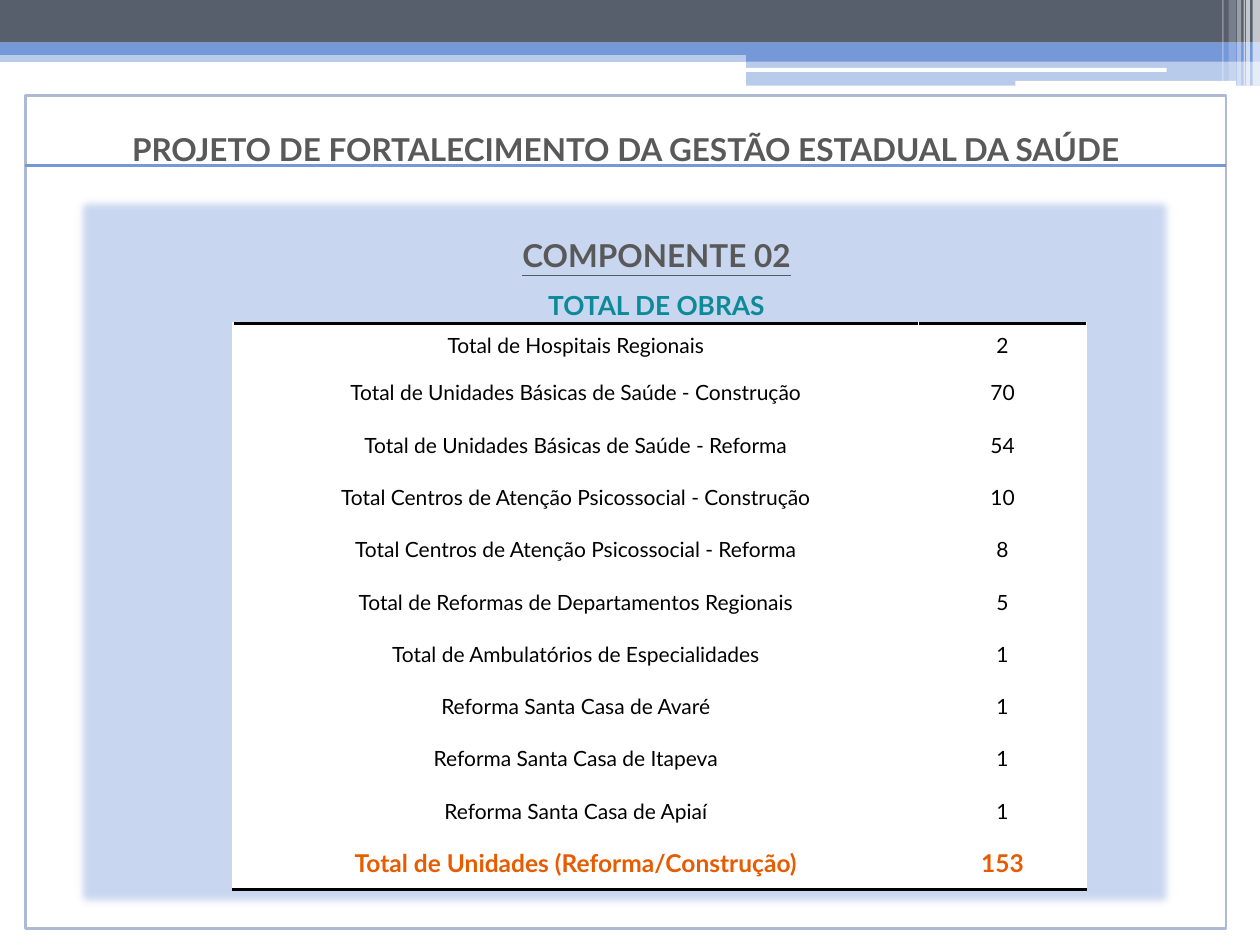
from lxml import etree
from pptx import Presentation
from pptx.dml.color import RGBColor
from pptx.enum.shapes import MSO_CONNECTOR, MSO_SHAPE
from pptx.enum.text import MSO_ANCHOR, PP_ALIGN
from pptx.oxml.ns import qn
from pptx.util import Cm, Pt

RECTANGLE, ROUNDED = MSO_SHAPE.RECTANGLE, MSO_SHAPE.ROUNDED_RECTANGLE
STRAIGHT = MSO_CONNECTOR.STRAIGHT
TOP, MIDDLE = MSO_ANCHOR.TOP, MSO_ANCHOR.MIDDLE
CENTER = PP_ALIGN.CENTER
FONT = "Lato"

COLORS = {
    "white": "FFFFFF", "black": "000000", "slate": "575F6D", "blue": "7598D9",
    "pale": "C8D6F0", "outline": "AEBAD5", "gray": "595959", "teal": "0D8A97",
    "orange": "E75C01",
}

TITLE = "PROJETO DE FORTALECIMENTO DA GESTÃO ESTADUAL DA SAÚDE"
COMPONENT = "COMPONENTE 02"
SUBTITLE = "TOTAL DE OBRAS"
WORKS = [
    ("Total de Hospitais Regionais", "2"),
    ("Total de Unidades Básicas de Saúde - Construção", "70"),
    ("Total de Unidades Básicas de Saúde - Reforma", "54"),
    ("Total Centros de Atenção Psicossocial - Construção", "10"),
    ("Total Centros de Atenção Psicossocial - Reforma", "8"),
    ("Total de Reformas de Departamentos Regionais", "5"),
    ("Total de Ambulatórios de Especialidades", "1"),
    ("Reforma Santa Casa de Avaré", "1"),
    ("Reforma Santa Casa de Itapeva", "1"),
    ("Reforma Santa Casa de Apiaí", "1"),
    ("Total de Unidades (Reforma/Construção)", "153"),
]

# Lengths in centimetres
WIDTH, HEIGHT = 25.4, 19.05
RIGHT_BAND = 15.04
# left, top, width, height, colour, opacity in percent
BANDS = [
    (0, 1.02, WIDTH, 0.23, "blue", 50),
    (0, 0, WIDTH, 0.86, "slate", 100),
    (0, 0.86, WIDTH, 0.25, "blue", 100),
    (RIGHT_BAND, 0.99, WIDTH - RIGHT_BAND, 0.25, "blue", 100),
    (RIGHT_BAND, 1.22, WIDTH - RIGHT_BAND, 0.51, "blue", 50),
]
SLITS = [(15.01, 1.37, 8.51, 0.08), (20.47, 1.63, 4.45, 0.1)]
# left, width, height, opacity in percent
STRIPES = [
    (25.25, 0.15, 1.73, 65), (25.12, 0.08, 1.73, 65), (25.07, 0.03, 1.73, 60),
    (24.94, 0.08, 1.73, 40), (24.77, 0.15, 1.63, 20), (24.64, 0.03, 1.63, 30),
]
FRAME = (0.51, 1.93, 24.21, 16.79)
PANEL = (1.5, 3.94, 22.2, 14.4)
TABLE_LEFT, TABLE_TOP, TABLE_HEIGHT = 4.7, 6.53, 11.4
COLUMN_WIDTHS = (13.82, 3.38)
FIRST_ROW = 0.86
RULE_TOP = 3.33


def color(name):
    return RGBColor.from_string(COLORS[name])


def add_box(slide, box, fill, opacity=100, line=None, kind=RECTANGLE):
    shape = slide.shapes.add_shape(kind, *map(Cm, box))
    shape.shadow.inherit = False
    shape.fill.solid()
    shape.fill.fore_color.rgb = color(fill)
    if opacity < 100:
        fill_color = shape.fill._xPr.find(".//" + qn("a:srgbClr"))
        etree.SubElement(fill_color, qn("a:alpha"), val=str(opacity * 1000))
    if line:
        shape.line.color.rgb = color(line)
        shape.line.width = Pt(1.5)
    else:
        shape.line.fill.background()
    return shape


def set_margins(target, left=0, top=0, right=0, bottom=0):
    target.margin_left, target.margin_top = Cm(left), Cm(top)
    target.margin_right, target.margin_bottom = Cm(right), Cm(bottom)


def write(paragraph, text, size, ink, bold=False, underline=False, before=0):
    paragraph.alignment = CENTER
    paragraph.space_before = Pt(before)
    run = paragraph.add_run()
    run.text = text
    font = run.font
    font.name, font.size = FONT, Pt(size)
    font.bold, font.underline = bold, underline
    font.color.rgb = color(ink)


def add_cell_border(cell, side):
    """Draw a 2 pt black border; it must precede the cell fill in the XML."""
    border = etree.Element(qn("a:" + side), w=str(Pt(2)))
    fill = etree.SubElement(border, qn("a:solidFill"))
    etree.SubElement(fill, qn("a:srgbClr"), val=COLORS["black"])
    cell._tc.get_or_add_tcPr().insert(0, border)


def add_header_bands(slide):
    for *box, fill, opacity in BANDS:
        add_box(slide, box, fill, opacity)
    for box in SLITS:
        add_box(slide, box, "white", kind=ROUNDED)
    for left, width, height, opacity in STRIPES:
        add_box(slide, (left, 0, width, height), "white", opacity)


def add_frame(slide):
    frame = add_box(slide, FRAME, "white", line="outline").text_frame
    frame.vertical_anchor = TOP
    set_margins(frame, top=0.69)
    write(frame.paragraphs[0], TITLE, 18, "gray", bold=True)


def add_panel(slide):
    panel = add_box(slide, PANEL, "pale", line="outline")
    effects = panel._element.spPr.find(qn("a:effectLst"))
    etree.SubElement(effects, qn("a:softEdge"), rad=str(Pt(5)))
    frame = panel.text_frame
    frame.vertical_anchor = TOP
    set_margins(frame, left=1.52, top=0.82, right=0.25)
    write(frame.paragraphs[0], COMPONENT, 18, "gray", bold=True, underline=True)
    write(frame.add_paragraph(), SUBTITLE, 15, "teal", bold=True, before=9)


def add_works_table(slide):
    last = len(WORKS) - 1
    table = slide.shapes.add_table(
        len(WORKS), len(COLUMN_WIDTHS), Cm(TABLE_LEFT), Cm(TABLE_TOP),
        Cm(sum(COLUMN_WIDTHS)), Cm(TABLE_HEIGHT)).table
    table.first_row = table.horz_banding = False
    for column, width in zip(table.columns, COLUMN_WIDTHS):
        column.width = Cm(width)
    for index, values in enumerate(WORKS):
        height = (TABLE_HEIGHT - FIRST_ROW) / last if index else FIRST_ROW
        table.rows[index].height = Cm(height)
        total = index == last
        for cell, text in zip(table.rows[index].cells, values):
            set_margins(cell)
            cell.vertical_anchor = MIDDLE
            cell.fill.solid()
            cell.fill.fore_color.rgb = color("white")
            write(cell.text_frame.paragraphs[0], text, 14 if total else 12,
                  "orange" if total else "black", bold=total)
            if index in (0, last):
                add_cell_border(cell, "lnB" if total else "lnT")


def add_title_rule(slide):
    left, right = FRAME[0], FRAME[0] + FRAME[2]
    rule = slide.shapes.add_connector(
        STRAIGHT, Cm(left), Cm(RULE_TOP), Cm(right), Cm(RULE_TOP))
    rule.line.color.rgb = color("blue")
    rule.line.width = Pt(1.5)
    etree.SubElement(rule._element.spPr, qn("a:effectLst"))


def main():
    presentation = Presentation()
    presentation.slide_width, presentation.slide_height = Cm(WIDTH), Cm(HEIGHT)
    slide = presentation.slides.add_slide(presentation.slide_layouts[6])
    add_header_bands(slide)
    add_frame(slide)
    add_panel(slide)
    add_works_table(slide)
    add_title_rule(slide)
    presentation.save("out.pptx")


if __name__ == "__main__":
    main()
